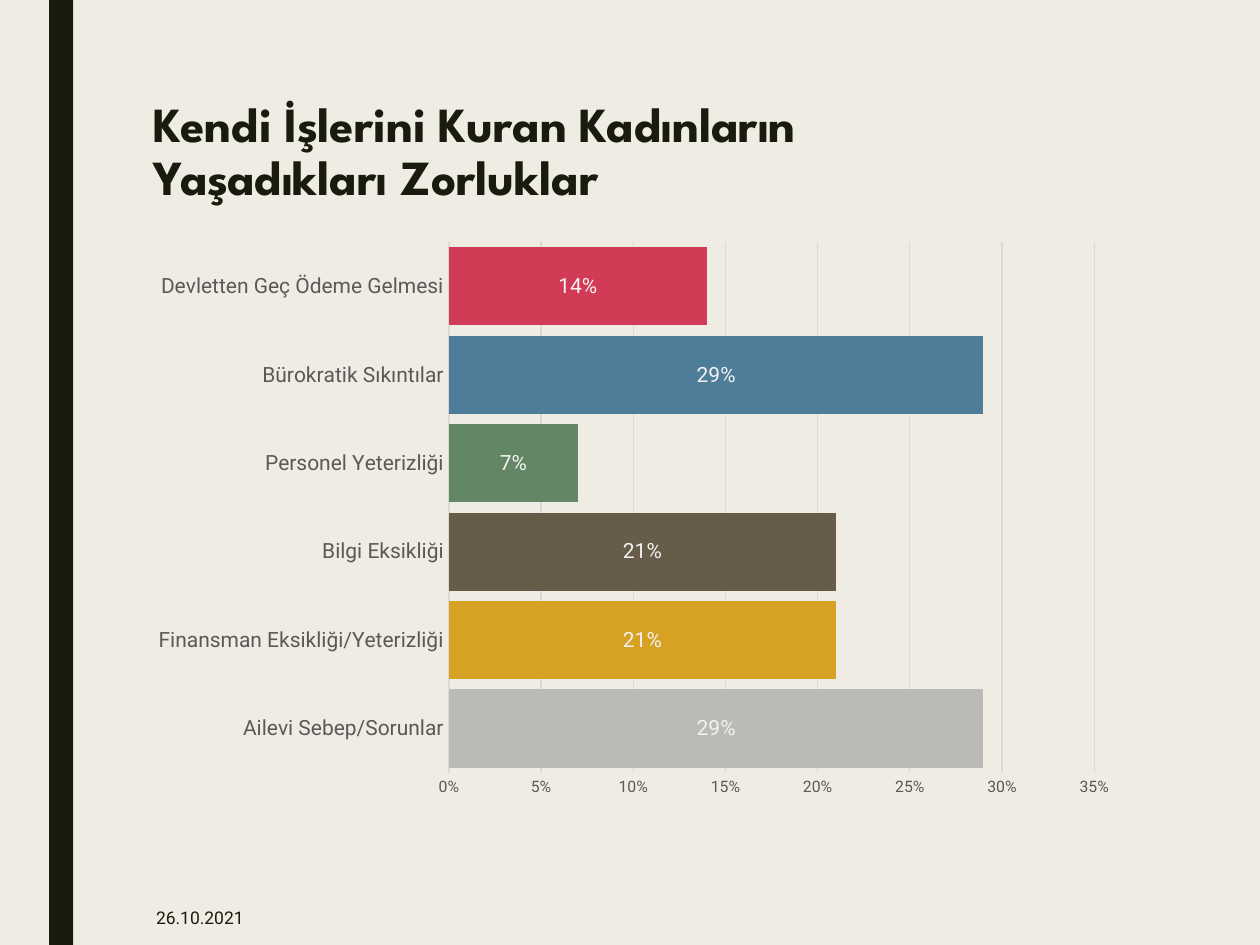
from lxml.etree import SubElement
from pptx import Presentation
from pptx.chart.data import CategoryChartData
from pptx.dml.color import RGBColor
from pptx.enum.chart import XL_CHART_TYPE as ChartType, XL_LABEL_POSITION as LabelPosition
from pptx.enum.chart import XL_TICK_MARK as TickMark
from pptx.enum.shapes import MSO_SHAPE as Shape
from pptx.enum.text import MSO_ANCHOR as Anchor, MSO_AUTO_SIZE as AutoSize, PP_ALIGN as Align
from pptx.oxml.ns import qn
from pptx.util import Inches, Pt

INK, PAPER, GRID, LABEL = "191B0E", "EFEDE3", "D9D9D9", "595959"
TITLE = {"name": "League Spartan", "size": Pt(28), "bold": True}
BODY = {"name": "Roboto", "size": Pt(10), "bold": False}
DIFFICULTIES = [
    ("Ailevi Sebep/Sorunlar", 0.29, "BABBB6"),
    ("Finansman Eksikliği/Yeterizliği", 0.21, "D7A124"),
    ("Bilgi Eksikliği", 0.21, "675C49"),
    ("Personel Yeterizliği", 0.07, "638764"),
    ("Bürokratik Sıkıntılar", 0.29, "4D7D99"),
    ("Devletten Geç Ödeme Gelmesi", 0.14, "D13B56"),
]
PLOT_AREA = {"x": 0.31, "y": 0.02, "w": 0.65, "h": 0.92}


def paint(fill, color):
    """Give a fill one solid colour."""
    fill.solid()
    fill.fore_color.rgb = RGBColor.from_string(color)


def style_font(font, style, color):
    """Apply a dict of font values and a colour."""
    for name, value in style.items():
        setattr(font, name, value)
    font.color.rgb = RGBColor.from_string(color)


def style_line(line, color):
    """Draw a thin line in one colour."""
    line.width = Pt(0.75)
    paint(line.fill, color)


def place(shape, left, top, width, height):
    """Move and size a shape in inches."""
    values = {"left": left, "top": top, "width": width, "height": height}
    for name, value in values.items():
        setattr(shape, name, Inches(value))


def add_side_bar(page):
    """Add the full-height bar at the left."""
    bar = page.shapes.add_shape(Shape.RECTANGLE, Inches(0.39), 0, Inches(0.19), Inches(7.5))
    bar.shadow.inherit = False
    paint(bar.fill, INK)
    bar.line.fill.background()


def write_text(frame, lines, style, anchor, spacing=1.0):
    """Write lines into one left-aligned paragraph."""
    settings = {"word_wrap": True, "auto_size": AutoSize.NONE, "vertical_anchor": anchor}
    for name, value in settings.items():
        setattr(frame, name, value)
    para = frame.paragraphs[0]
    para.alignment = Align.LEFT
    para.line_spacing = spacing
    for index, line in enumerate(lines):
        if index:
            para.add_line_break()
        span = para.add_run()
        span.text = line
        style_font(span.font, style, INK)


def set_plot_area(chart):
    """Fix the inner plot area as fractions of the chart."""
    area = chart._chartSpace.find(".//" + qn("c:plotArea"))
    layout = area.find(qn("c:layout"))
    if layout is None:
        layout = SubElement(area, qn("c:layout"))
        area.insert(0, layout)
    manual = SubElement(layout, qn("c:manualLayout"))
    settings = {"layoutTarget": "inner", "xMode": "edge", "yMode": "edge", **PLOT_AREA}
    for name, value in settings.items():
        SubElement(manual, qn("c:" + name)).set("val", str(value))


def style_axes(chart):
    """Format the category and percentage axes."""
    category, percent = chart.category_axis, chart.value_axis
    for axis, size in ((category, 12), (percent, 9)):
        axis.major_tick_mark = axis.minor_tick_mark = TickMark.NONE
        style_font(axis.tick_labels.font, {**BODY, "size": Pt(size)}, LABEL)
    category.has_major_gridlines = False
    style_line(category.format.line, GRID)
    scale = {"minimum_scale": 0, "maximum_scale": 0.35, "major_unit": 0.05}
    for name, value in scale.items():
        setattr(percent, name, value)
    percent.tick_labels.number_format = "0%"
    percent.tick_labels.number_format_is_linked = False
    percent.format.line.fill.background()
    style_line(percent.major_gridlines.format.line, GRID)


def style_bars(chart):
    """Colour the bars and label them with percentages."""
    plot = chart.plots[0]
    plot.gap_width = 13
    plot.vary_by_categories = False
    series = plot.series[0]
    paint(series.format.fill, "8C8D86")
    for index, (_, _, color) in enumerate(DIFFICULTIES):
        paint(series.points[index].format.fill, color)
    labels = series.data_labels
    settings = {"show_value": True, "position": LabelPosition.CENTER,
                "number_format": "0%", "number_format_is_linked": False}
    for name, value in settings.items():
        setattr(labels, name, value)
    style_font(labels.font, {**BODY, "size": Pt(12)}, "F2F2F2")


def add_difficulty_chart(page):
    """Add the bar chart of difficulties."""
    data = CategoryChartData(number_format="0%")
    data.categories = [name for name, _, _ in DIFFICULTIES]
    data.add_series("Series 1", [share for _, share, _ in DIFFICULTIES])
    box = [Inches(value) for value in (1.12, 1.83, 7.88, 4.58)]
    chart = page.shapes.add_chart(ChartType.BAR_CLUSTERED, *box, data).chart
    chart.has_title = chart.has_legend = False
    style_font(chart.font, BODY, "000000")
    set_plot_area(chart)
    style_axes(chart)
    style_bars(chart)


def main():
    """Build the slide and save the deck."""
    deck = Presentation()
    deck.slide_width, deck.slide_height = Inches(10), Inches(7.5)
    page = deck.slides.add_slide(deck.slide_layouts[5])
    paint(page.background.fill, PAPER)
    add_side_bar(page)
    title = page.shapes.title
    place(title, 1.12, 0.75, 7.88, 0.67)
    lines = ["Kendi İşlerini Kuran Kadınların", "Yaşadıkları Zorluklar"]
    write_text(title.text_frame, lines, TITLE, Anchor.TOP, 0.89)
    date = page.shapes.add_textbox(0, 0, 0, 0)
    place(date, 1.14, 7.06, 0.99, 0.44)
    write_text(date.text_frame, ["26.10.2021"], BODY, Anchor.MIDDLE)
    add_difficulty_chart(page)
    deck.save("out.pptx")


if __name__ == "__main__":
    main()
